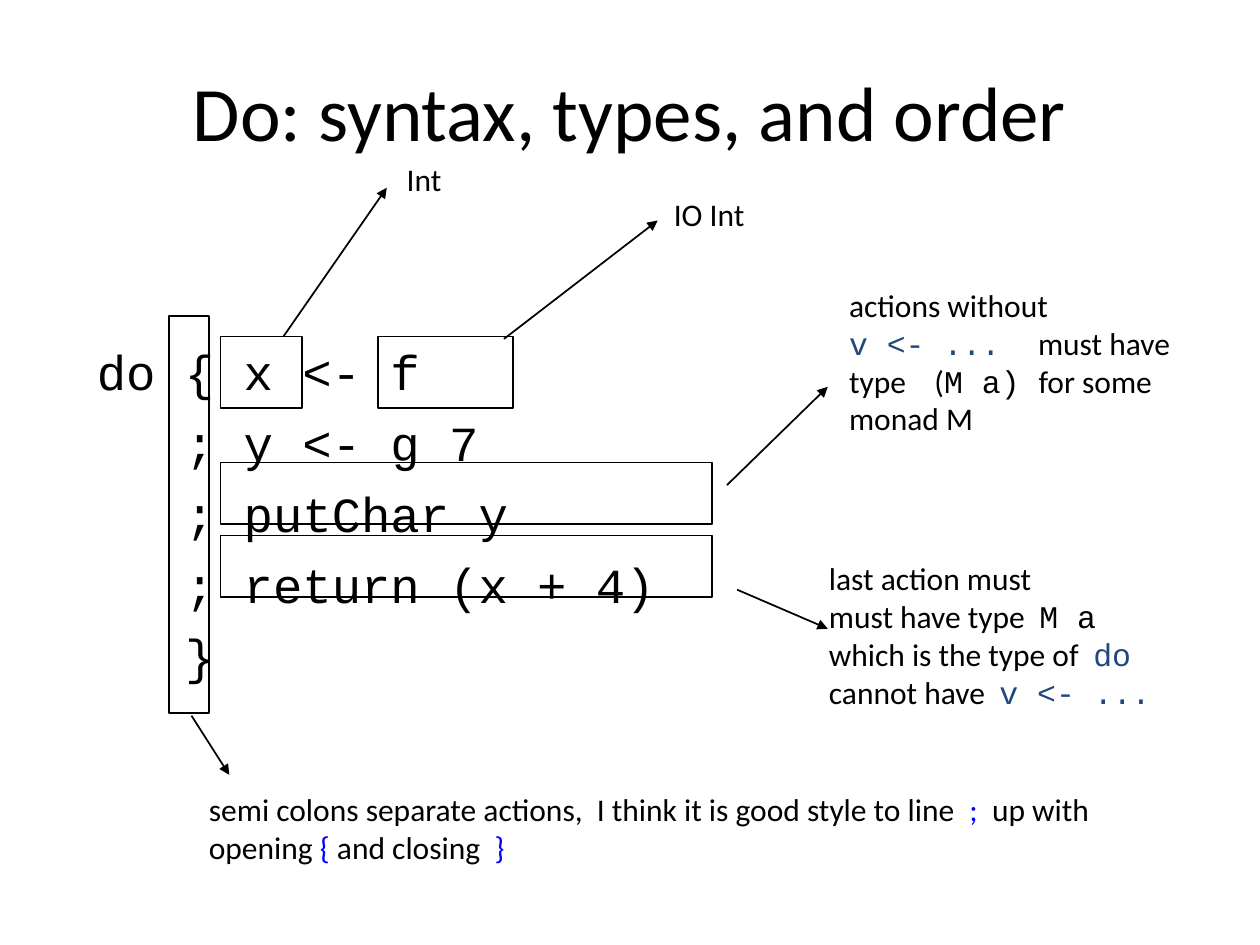
from pptx import Presentation
from pptx.dml.color import RGBColor as RGB
from pptx.enum.shapes import MSO_CONNECTOR as LINE, MSO_SHAPE as SHAPE
from pptx.enum.text import MSO_ANCHOR as ANCHOR, PP_ALIGN as ALIGN
from pptx.oxml.ns import qn
from pptx.util import Inches, Pt
from lxml.etree import SubElement as Sub

SANS, MONO = "Calibri", "Courier New"
BLACK, NAVY, BLUE, WHITE = "000000", "1F497D", "0000FF", "FFFFFF"


def tint(code):
    return RGB.from_string(code)


class Page:
    """Hold the text and line style and the slide being drawn."""

    def __init__(self, slide, size=18, width=1):
        self.slide = slide
        self.size = size
        self.width = width

    def box(self, *at):
        box = self.slide.shapes.add_shape(SHAPE.RECTANGLE, *map(Inches, at))
        box.shadow.inherit = False
        box.fill.solid()
        box.fill.fore_color.rgb = tint(WHITE)
        box.line.color.rgb = tint(BLACK)
        box.line.width = Pt(self.width)

    def arrow(self, *ends):
        line = self.slide.shapes.add_connector(LINE.STRAIGHT, *map(Inches, ends))
        line.line.color.rgb = tint(BLACK)
        line.line.width = Pt(self.width)
        props = line._element.spPr
        Sub(props.find(qn("a:ln")), qn("a:tailEnd"), type="triangle")
        Sub(props, qn("a:effectLst"))

    def frame(self, at, wrap=True):
        frame = self.slide.shapes.add_textbox(*map(Inches, at)).text_frame
        frame.word_wrap = wrap
        return frame

    def lines(self, frame, rows, size=None):
        for i, row in enumerate(rows):
            para = frame.add_paragraph() if i else frame.paragraphs[0]
            para.font.size = Pt(size or self.size)
            fonts = {font for _, font, _ in row}
            hues = {hue for _, _, hue in row}
            if len(fonts) == 1:
                para.font.name = row[0][1]
            if len(hues) == 1:
                para.font.color.rgb = tint(row[0][2])
            for text, font, hue in row:
                run = para.add_run()
                run.text = text
                if len(fonts) > 1:
                    run.font.name = font
                if len(hues) > 1:
                    run.font.color.rgb = tint(hue)

    def note(self, at, rows, wrap=True):
        self.lines(self.frame(at, wrap), rows)

    def title(self, at, text):
        frame = self.frame(at)
        frame.vertical_anchor = ANCHOR.MIDDLE
        self.lines(frame, [[say(text)]], 44)
        frame.paragraphs[0].alignment = ALIGN.CENTER

    def code(self, at, rows, indent):
        frame = self.frame(at)
        self.lines(frame, [[mono(row)] for row in rows], 28)
        for i, para in enumerate(frame.paragraphs):
            para.space_before = Pt(7)
            if i:
                para._p.get_or_add_pPr().set("marL", str(Inches(indent)))


def say(text, hue=BLACK):
    return text, SANS, hue


def mono(text, hue=BLACK):
    return text, MONO, hue


def main():
    deck = Presentation()
    deck.slide_width, deck.slide_height = Inches(10), Inches(7.5)
    page = Page(deck.slides.add_slide(deck.slide_layouts[6]))

    for top in (4.25, 3.67):
        page.box(1.75, top, 3.9, 0.49)
    page.box(1.34, 2.51, 0.32, 3.15)
    for left, wide in ((1.75, 0.65), (3, 1.07)):
        page.box(left, 2.67, wide, 0.57)

    page.title((0.75, 0.25, 8.5, 1.25), "Do: syntax, types, and order")

    for ends in (
        (4, 2.69, 5.22, 1.75),
        (2.25, 2.67, 3.07, 1.49),
        (1.52, 5.68, 1.82, 6.15),
        (5.85, 4.68, 6.57, 4.99),
        (5.77, 3.85, 6.57, 3.07),
    ):
        page.arrow(*ends)

    page.note((5.25, 1.5, 0.84, 0.4), [[say("IO Int")]], wrap=False)
    page.note((3.13, 1.22, 0.53, 0.4), [[say("Int")]])
    page.note((1.56, 6.22, 7.27, 0.7), [
        [say("semi colons separate actions,  I think it is good style to line "),
         say(" ;  ", BLUE), say("up with")],
        [say("opening"), say(" {", BLUE), say(" and closing  "), say("}", BLUE)],
    ], wrap=False)
    page.note((6.48, 4.39, 3.01, 1.3), [
        [say("last action must")],
        [say("must have type  "), mono("M a")],
        [say("which is the type of  "), mono("do", NAVY)],
        [say("cannot have  "), mono("v <- ...", NAVY)],
    ])
    page.note((6.64, 2.22, 2.83, 1.31), [
        [say("actions without")],
        [mono("v <- ...  ", NAVY), say("must have")],
        [say("type    ("), mono("M a) "), say("for some")],
        [say("monad M")],
    ], wrap=False)
    page.code(
        (0.67, 2.66, 8.92, 2.68),
        ["do { x <- f", "; y <- g 7", "; putChar y", "; return (x + 4)", "}"],
        indent=0.7,
    )
    deck.save("out.pptx")


if __name__ == "__main__":
    main()
